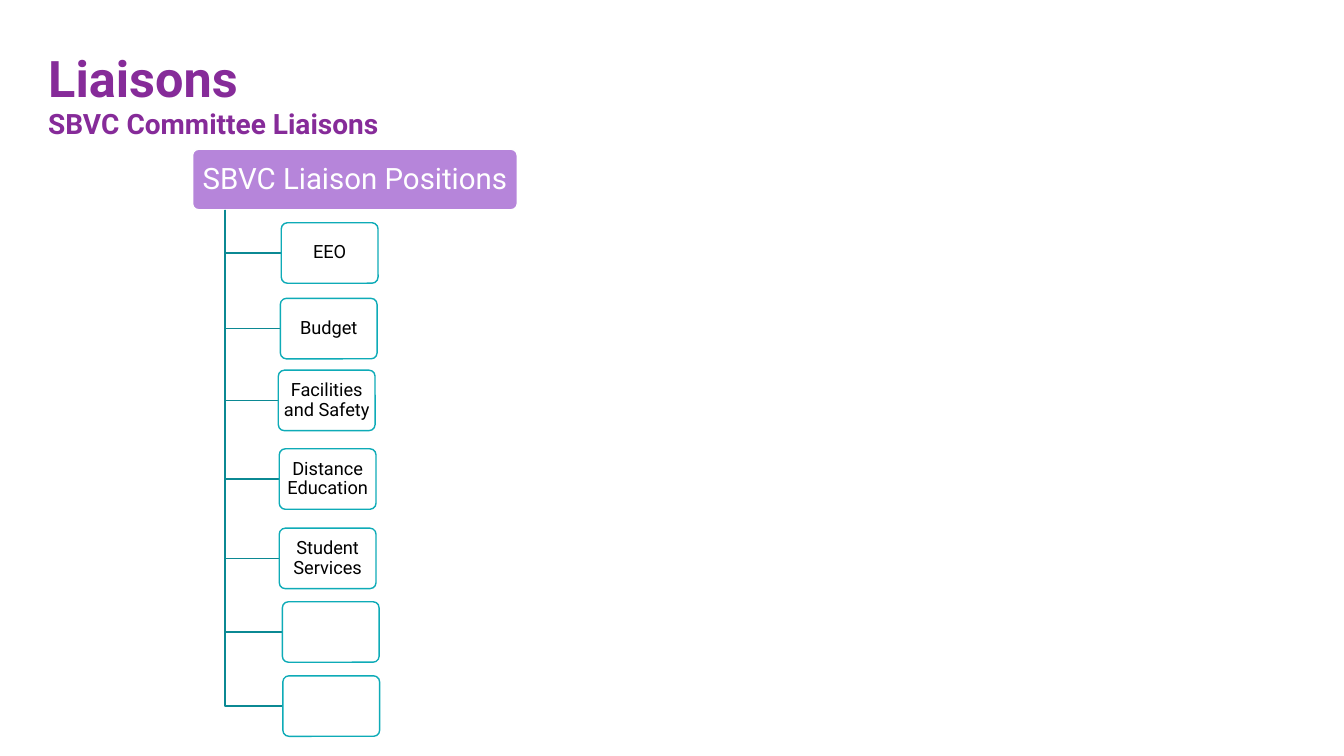
from lxml.etree import SubElement
from pptx import Presentation
from pptx.dml.color import RGBColor
from pptx.enum.shapes import MSO_SHAPE
from pptx.enum.text import MSO_ANCHOR, PP_ALIGN
from pptx.oxml.ns import qn
from pptx.util import Inches, Pt

WIDTH, HEIGHT = Inches(13.33), Inches(7.5)
FONT = "Roboto"
COLORS = {
    "title": "862B99",
    "heading": "B685DA",
    "white": "FFFFFF",
    "black": "000000",
    "branch": "0B8993",
    "border": "0EABB7",
}
# Lengths below are percentages of the slide's width or height.
TITLE_LEFT = 2.85
TRUNK_LEFT = 16.73
HEADING_TOP = 19.75
BOX_HEIGHT = 8
BOX_WIDTH = 7.2
# Label, left and top of each position.
POSITIONS = [
    ("EEO", 20.93, 29.47),
    ("Budget", 20.86, 39.47),
    ("Facilities and Safety", 20.71, 48.97),
    ("Distance Education", 20.78, 59.37),
    ("Student Services", 20.78, 69.87),
    ("", 21.01, 79.6),
    ("", 21.05, 89.4),
]


def across(percent):
    return round(WIDTH * percent / 100)


def down(percent):
    return round(HEIGHT * percent / 100)


def color(name):
    return RGBColor.from_string(COLORS[name])


def write(shape, text, size, color_name, bold=False, spacing=0.9):
    frame = shape.text_frame
    frame.word_wrap = True
    para = frame.paragraphs[0]
    para.text = text
    para.line_spacing = spacing
    para.font.name = FONT
    para.font.size = Pt(size)
    para.font.bold = bold
    para.font.color.rgb = color(color_name)
    return para


def add_title(page, text, top, width, height, size, anchor, spacing):
    box = page.shapes.add_textbox(
        across(TITLE_LEFT), down(top), across(width), down(height))
    box.text_frame.vertical_anchor = anchor
    return write(box, text, size, "title", bold=True, spacing=spacing)


def add_box(page, text, left, top, width, fill, border, size, ink):
    box = page.shapes.add_shape(
        MSO_SHAPE.ROUNDED_RECTANGLE,
        across(left), down(top), across(width), down(BOX_HEIGHT))
    box.adjustments[0] = 0.1
    box.shadow.inherit = False
    box.fill.solid()
    box.fill.fore_color.rgb = color(fill)
    box.line.color.rgb = color(border)
    box.line.width = Pt(1)
    if text:
        frame = box.text_frame
        frame.margin_left = frame.margin_right = Inches(0.02)
        frame.margin_top = frame.margin_bottom = Inches(0.02)
        frame.vertical_anchor = MSO_ANCHOR.MIDDLE
        write(box, text, size, ink).alignment = PP_ALIGN.CENTER
    return box


def set_opacity(shape, percent):
    fill = shape.fill._xPr.find(qn("a:solidFill"))
    SubElement(fill[0], qn("a:alpha"), val=str(percent * 1000))


def add_branch(page, left, top):
    """Draw an elbow from under the heading to the middle of a box's left side."""
    trunk, middle = across(TRUNK_LEFT), down(top + BOX_HEIGHT / 2)
    builder = page.shapes.build_freeform(trunk, down(HEADING_TOP + BOX_HEIGHT))
    builder.add_line_segments(
        [(trunk, middle), (across(left), middle)], close=False)
    branch = builder.convert_to_shape()
    branch.shadow.inherit = False
    branch.fill.background()
    branch.line.color.rgb = color("branch")
    branch.line.width = Pt(1)


def main():
    deck = Presentation()
    deck.slide_width, deck.slide_height = WIDTH, HEIGHT
    page = deck.slides.add_slide(deck.slide_layouts[6])

    add_title(page, "Liaisons", 4.53, 43, 12.4, 36, MSO_ANCHOR.MIDDLE, 0.9)
    subtitle = add_title(page, "SBVC Committee Liaisons",
                         14.27, 29.4, 5.33, 20, MSO_ANCHOR.TOP, 0.8)
    subtitle.space_before = Pt(9)

    add_box(page, "SBVC Liaison Positions", 14.33, HEADING_TOP, 24.16,
            "heading", "white", 21, "white")
    for label, left, top in POSITIONS:
        add_branch(page, left, top)
        box = add_box(page, label, left, top, BOX_WIDTH,
                      "white", "border", 13, "black")
        set_opacity(box, 90)

    deck.save("out.pptx")


if __name__ == "__main__":
    main()
